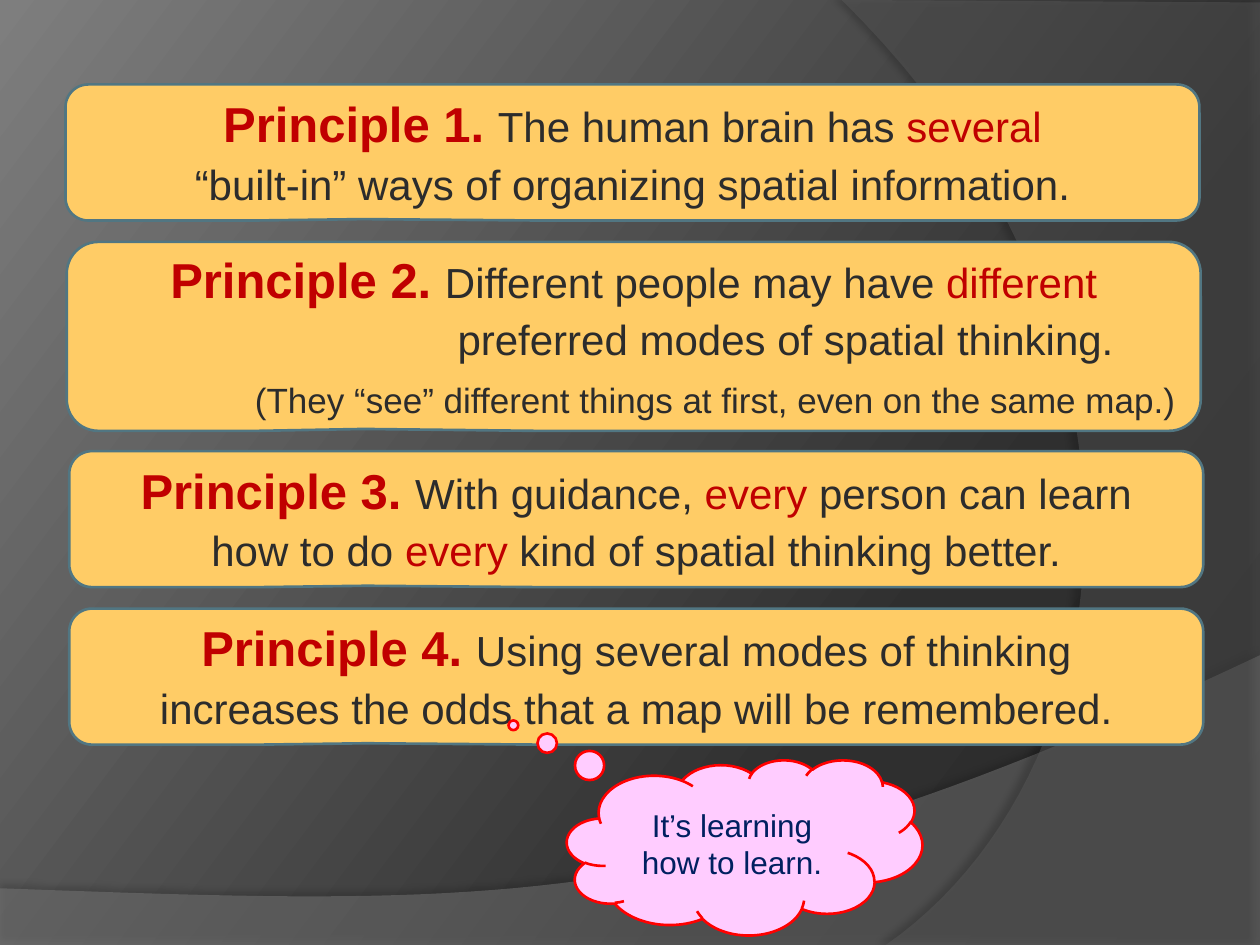
from dataclasses import dataclass

from lxml.etree import SubElement
from pptx import Presentation
from pptx.dml.color import RGBColor
from pptx.enum.shapes import MSO_SHAPE as Preset
from pptx.enum.text import MSO_ANCHOR as Anchor, PP_ALIGN as Align
from pptx.oxml.ns import qn
from pptx.util import Inches, Pt

COLORS = {
    "banner": "FFCC66", "banner_line": "517682", "accent": "C00000",
    "text": "2C2C2C", "cloud": "FFCCFF", "cloud_line": "FF0000",
    "cloud_text": "002060", "wave": "7F7F7F", "arc": "5E5E5E", "shadow": "000000",
}
BACKDROP_STOPS = [(0, "282828"), (30, "2F2F2F"), (100, "7E7E7E")]
FONT = "Arial"
CURVE_STEPS = 48

Point = tuple[float, float]


@dataclass
class Piece:
    text: str
    color: str = "text"
    size: int = 24
    bold: bool = False


@dataclass
class Line:
    pieces: list[Piece]
    indent: float = 0


@dataclass
class Callout:
    preset: Preset
    box: tuple[float, float, float, float]
    adjustments: list[float]
    fill: str
    outline: str
    lines: list[Line]
    spacing: int | None = None


@dataclass
class Sweep:
    corners: list[Point]
    curve: list[Point]
    fill: str
    opacity: int
    shadow_opacity: int
    shadow_distance: float
    shadow_angle: int


def heading(number: int) -> Piece:
    return Piece(f"Principle {number}. ", "accent", 28, True)


def principle(left: float, top: float, height: float, lines: list[Line]) -> Callout:
    return Callout(Preset.ROUNDED_RECTANGULAR_CALLOUT, (left, top, 9, height),
                   [-0.238, 0.49, 0.167], "banner", "banner_line", lines, 32)


SWEEPS = [
    Sweep([(0, 7.05), (0, 7.51), (10, 7.51)],
          [(10, 5.2), (5.59, 7.29), (3.91, 7.19), (0, 7.05)], "wave", 45, 35, 3.5, 270),
    Sweep([(10, 0.02), (10, 7.5)],
          [(7.03, 7.5), (8.91, 6.19), (9.47, 2.75), (6.68, 0)], "arc", 40, 45, 4, 180),
]

CALLOUTS = [
    principle(0.52, 0.67, 1.08, [
        Line([heading(1), Piece("The human brain has "), Piece("several", "accent")]),
        Line([Piece("“built-in” ways of organizing spatial information.")]),
    ]),
    principle(0.53, 1.92, 1.5, [
        Line([heading(2), Piece("Different people may have "), Piece("different", "accent")]),
        Line([Piece("preferred modes of spatial thinking.")], 2.41),
        Line([Piece("(They “see” different things at first, even on the same map.)", size=20)], 1.3),
    ]),
    principle(0.55, 3.58, 1.08, [
        Line([heading(3), Piece("With guidance, "), Piece("every", "accent"),
              Piece(" person can learn")]),
        Line([Piece("how to do "), Piece("every", "accent"),
              Piece(" kind of spatial thinking better.")]),
    ]),
    principle(0.55, 4.83, 1.08, [
        Line([heading(4), Piece("Using several modes of thinking")]),
        Line([Piece("increases the odds that a map will be remembered.")]),
    ]),
    Callout(Preset.CLOUD_CALLOUT, (4.5, 6.03, 2.82, 1.39), [-0.651, -0.697],
            "cloud", "cloud_line", [
                Line([Piece("It’s learning", "cloud_text", 18)]),
                Line([Piece("how to learn.", "cloud_text", 18)]),
            ]),
]


def rgb(name: str) -> RGBColor:
    return RGBColor.from_string(COLORS[name])


def add_color(parent, value: str, opacity: int = 100) -> None:
    color = SubElement(parent, qn("a:srgbClr"), val=value)
    SubElement(color, qn("a:alpha"), val=str(opacity * 1000))


def paint_backdrop(page) -> None:
    fill = page.background.fill
    fill.gradient()
    fill.gradient_angle = 360 - 217
    stops = page.element.find(".//" + qn("a:gsLst"))
    for stop in list(stops):
        stops.remove(stop)
    for position, value in BACKDROP_STOPS:
        add_color(SubElement(stops, qn("a:gs"), pos=str(position * 1000)), value)


def bezier(points: list[Point]) -> list[Point]:
    def at(t: float) -> Point:
        weights = ((1 - t) ** 3, 3 * t * (1 - t) ** 2, 3 * t * t * (1 - t), t ** 3)
        return (sum(w * p[0] for w, p in zip(weights, points)),
                sum(w * p[1] for w, p in zip(weights, points)))

    return [at(step / CURVE_STEPS) for step in range(CURVE_STEPS + 1)]


def draw_sweep(page, sweep: Sweep) -> None:
    outline = [(Inches(x), Inches(y)) for x, y in sweep.corners + bezier(sweep.curve)]
    builder = page.shapes.build_freeform(*outline[0])
    builder.add_line_segments(outline[1:], close=True)
    shape = builder.convert_to_shape()
    shape.fill.solid()
    shape.fill.fore_color.rgb = rgb(sweep.fill)
    properties = shape.element.spPr
    solid_color = properties.find(qn("a:solidFill")).find(qn("a:srgbClr"))
    SubElement(solid_color, qn("a:alpha"), val=str(sweep.opacity * 1000))
    shape.line.fill.background()
    shape.shadow.inherit = False
    shadow = SubElement(properties.find(qn("a:effectLst")), qn("a:outerShdw"),
                        blurRad=str(Pt(4)), dist=str(Pt(sweep.shadow_distance)),
                        dir=str(sweep.shadow_angle * 60000), rotWithShape="0")
    add_color(shadow, COLORS["shadow"], sweep.shadow_opacity)


def write_line(para, line: Line, spacing: int | None) -> None:
    para.alignment = Align.CENTER
    if spacing:
        para.line_spacing = Pt(spacing)
    if line.indent:
        para._p.get_or_add_pPr().set("marL", str(Inches(line.indent)))
    for piece in line.pieces:
        span = para.add_run()
        span.text = piece.text
        span.font.name = FONT
        span.font.size = Pt(piece.size)
        span.font.bold = piece.bold
        span.font.color.rgb = rgb(piece.color)


def draw_callout(page, callout: Callout) -> None:
    box = page.shapes.add_shape(callout.preset, *map(Inches, callout.box))
    for index, value in enumerate(callout.adjustments):
        box.adjustments[index] = value
    box.fill.solid()
    box.fill.fore_color.rgb = rgb(callout.fill)
    box.line.color.rgb = rgb(callout.outline)
    box.line.width = Pt(1.5)
    box.shadow.inherit = False
    frame = box.text_frame
    frame.word_wrap = True
    frame.vertical_anchor = Anchor.MIDDLE
    for index, line in enumerate(callout.lines):
        para = frame.add_paragraph() if index else frame.paragraphs[0]
        write_line(para, line, callout.spacing)


def main() -> None:
    deck = Presentation()
    deck.slide_width, deck.slide_height = Inches(10), Inches(7.5)
    page = deck.slides.add_slide(deck.slide_layouts[6])
    paint_backdrop(page)
    for sweep in SWEEPS:
        draw_sweep(page, sweep)
    for callout in CALLOUTS:
        draw_callout(page, callout)
    deck.save("out.pptx")


if __name__ == "__main__":
    main()
